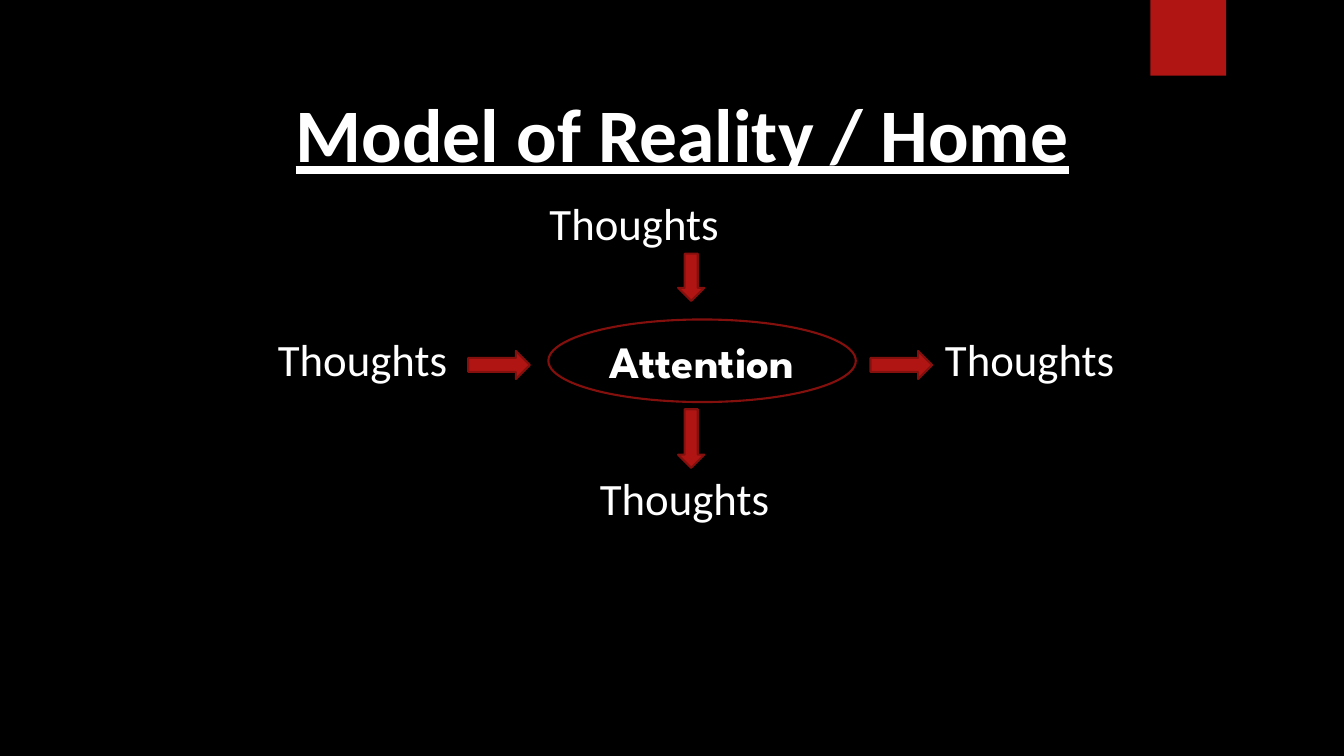
from pptx import Presentation
from pptx.dml.color import RGBColor
from pptx.enum.shapes import MSO_SHAPE
from pptx.enum.text import MSO_ANCHOR, PP_ALIGN
from pptx.util import Pt

RECTANGLE, ELLIPSE = MSO_SHAPE.RECTANGLE, MSO_SHAPE.OVAL
DOWN_ARROW, RIGHT_ARROW = MSO_SHAPE.DOWN_ARROW, MSO_SHAPE.RIGHT_ARROW
TOP, MIDDLE = MSO_ANCHOR.TOP, MSO_ANCHOR.MIDDLE
LEFT, CENTER = PP_ALIGN.LEFT, PP_ALIGN.CENTER


def color(value):
    return RGBColor.from_string(value)


class AttentionSlide:
    BLACK, WHITE, RED, DARK_RED = "000000", "FFFFFF", "B01513", "84100E"
    BODY_FONT, ACCENT_FONT = "Calibri", "League Spartan"

    def __init__(self, presentation):
        self.slide = presentation.slides.add_slide(presentation.slide_layouts[6])
        background = self.slide.background.fill
        background.solid()
        background.fore_color.rgb = color(self.BLACK)

    def shape(self, kind, left, top, width, height, fill, line=None):
        shape = self.slide.shapes.add_shape(
            kind, Pt(left), Pt(top), Pt(width), Pt(height))
        shape.shadow.inherit = False
        shape.fill.solid()
        shape.fill.fore_color.rgb = color(fill)
        if line:
            shape.line.color.rgb = color(line)
            shape.line.width = Pt(1.5)
        else:
            shape.line.fill.background()
        return shape

    def arrow(self, kind, left, top, width, height):
        self.shape(kind, left, top, width, height, self.RED, self.DARK_RED)

    def add_text(self, shape, text, size, font=BODY_FONT, bold=False,
                 underline=False, align=LEFT, anchor=TOP):
        shape.text_frame.vertical_anchor = anchor
        paragraph = shape.text_frame.paragraphs[0]
        paragraph.alignment = align
        run = paragraph.add_run()
        run.text = text
        run.font.name = font
        run.font.size = Pt(size)
        run.font.bold = bold
        run.font.underline = underline
        run.font.color.rgb = color(self.WHITE)
        return paragraph

    def label(self, text, left, top):
        box = self.slide.shapes.add_textbox(Pt(left), Pt(top), Pt(124), Pt(39))
        frame = box.text_frame
        frame.word_wrap = True
        frame.margin_left = frame.margin_right = 0
        frame.margin_top = frame.margin_bottom = 0
        self.add_text(box, text, 32)

    def title_panel(self, text):
        panel = self.shape(RECTANGLE, 61.2, 54, 834.5, 424, self.BLACK)
        panel.text_frame.margin_left = Pt(150)
        paragraph = self.add_text(panel, text, 54, bold=True, underline=True)
        paragraph.line_spacing = 1.07

    def focus(self, text):
        ellipse = self.shape(ELLIPSE, 391.7, 228.2, 219.6, 59,
                             self.BLACK, self.DARK_RED)
        self.add_text(ellipse, text, 32, self.ACCENT_FONT, bold=True,
                      align=CENTER, anchor=MIDDLE)


def main():
    presentation = Presentation()
    presentation.slide_width, presentation.slide_height = Pt(960), Pt(540)
    slide = AttentionSlide(presentation)

    slide.shape(RECTANGLE, 821.8, 0, 54, 90, slide.RED)
    slide.title_panel("Model of Reality / Home")
    for left, top in ((392.5, 139.5), (198.5, 237), (675, 237), (428.5, 336)):
        slide.label("Thoughts", left, top)
    for top, height in ((181.2, 33.8), (292.3, 41.8)):
        slide.arrow(DOWN_ARROW, 484.4, top, 18.7, height)
    slide.focus("Attention")
    for left in (334.5, 621.8):
        slide.arrow(RIGHT_ARROW, left, 250.7, 44, 20)

    presentation.save("out.pptx")


if __name__ == "__main__":
    main()
